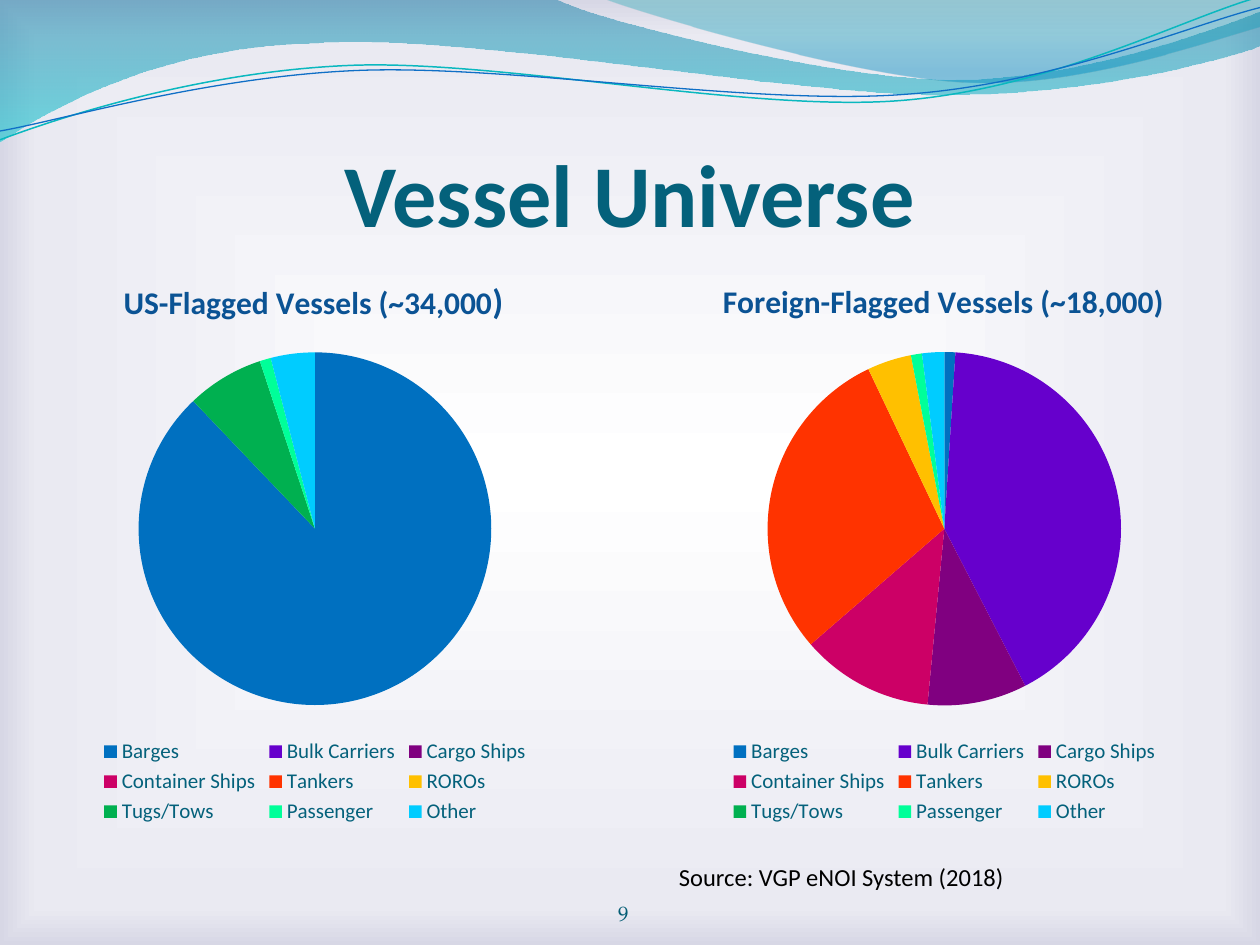
from dataclasses import dataclass

from lxml.etree import SubElement, fromstring
from pptx import Presentation
from pptx.chart.data import CategoryChartData
from pptx.dml.color import RGBColor as RGB
from pptx.enum.chart import XL_CHART_TYPE as ChartType, XL_LEGEND_POSITION as LegendPos
from pptx.enum.text import MSO_ANCHOR as Anchor, MSO_AUTO_SIZE as AutoSize, PP_ALIGN as Align
from pptx.oxml.ns import nsdecls, qn
from pptx.util import Inches, Pt

COLORS = {
    "title": "04617B", "chart_title": "0B5394", "legend": "04617B",
    "source": "000000", "number": "045D75",
    "teal_line": "0AB8BF", "blue_line": "0F6FC6",
}
SLICES = {
    "Barges": "0070C0", "Bulk Carriers": "6600CC", "Cargo Ships": "800080",
    "Container Ships": "CC0066", "Tankers": "FF3300", "ROROs": "FFC000",
    "Tugs/Tows": "00B050", "Passenger": "00FF99", "Other": "00CCFF",
}
DOWNWARD = '<a:lin ang="5400000" scaled="0"/>'
FROM_CENTER = '<a:path path="rect"><a:fillToRect l="50000" t="50000" r="50000" b="50000"/></a:path>'


@dataclass
class Wave:
    start: tuple
    segments: list
    stops: tuple = ()
    line: str = ""
    width: float = 0


@dataclass
class Pie:
    left: float
    width: float
    title: list
    title_x: float
    values: tuple


WAVES = [
    Wave((0, 0), [
        (4.4, -0.01), (4.76, 0.17, 6.64, 0.63, 7.58, 0.63), (8.53, 0.63, 9.58, 0.26, 10, 0.09),
        (10.01, 0.36), (9.83, 0.44, 8.7, 0.76, 7.46, 0.75), (6.22, 0.75, 3.82, 0.28, 2.57, 0.34),
        (1.29, 0.36, 0.46, 0.83, -0.01, 1.13), (0, 0),
    ], stops=((0, "0074A1", 45), (100, "00C6CF", 55))),
    Wave((4.79, -0.01), [
        (5.09, 0.11, 6.82, 0.62, 7.69, 0.65), (8.56, 0.69, 9.61, 0.32, 10, 0.21), (10, 0),
        (4.79, -0.01),
    ], stops=((0, "00A1A9", 30), (80, "008BBF", 45))),
    Wave((0, 1.11), [
        (0.48, 0.93, 1.58, 0.57, 2.77, 0.52), (3.95, 0.47, 5.93, 0.89, 7.13, 0.8),
        (8.33, 0.71, 9.38, 0.15, 9.98, -0.02),
    ], line="teal_line", width=0.85),
    Wave((0, 1.04), [
        (0.47, 0.96, 1.64, 0.61, 2.83, 0.56), (4.03, 0.51, 5.97, 0.84, 7.17, 0.75),
        (8.36, 0.67, 9.41, 0.21, 10, 0.06),
    ], line="blue_line", width=0.75),
]
PIES = [
    Pie(0, 5, [("US-Flagged Vessels (~34,000", 18), (")", 20)], 0.19,
        (87, 0, 0, 0, 0, 0, 7, 1, 4)),
    Pie(4.99, 5.01, [("Foreign-Flagged Vessels (~18,000)", 18)], 0.14,
        (1, 41, 9, 12, 29, 4, 0, 1, 2)),
]


def add_text(p, text: str, size: float, color: str, font: str = "Calibri", bold: bool = False) -> None:
    r = p.add_run()
    r.text = text
    r.font.size, r.font.name, r.font.bold = Pt(size), font, bold
    r.font.color.rgb = RGB.from_string(COLORS[color])


def set_gradient(fill, element, stops: tuple, direction: str) -> None:
    fill.gradient()
    old = next(element.iter(qn("a:gradFill")))
    marks = "".join(
        f'<a:gs pos="{pos * 1000}"><a:srgbClr val="{color}"><a:alpha val="{alpha * 1000}"/></a:srgbClr></a:gs>'
        for pos, color, alpha in stops)
    new = fromstring(f'<a:gradFill {nsdecls("a")} rotWithShape="1"><a:gsLst>{marks}</a:gsLst>{direction}</a:gradFill>')
    old.getparent().replace(old, new)


def bend(sp, segments: list) -> None:
    outline = next(sp.element.iter(qn("a:path")))
    lines = iter(outline.findall(qn("a:lnTo")))
    for seg in segments:
        line = next(lines)
        if len(seg) == 2:
            continue
        curve = SubElement(outline, qn("a:cubicBezTo"))
        outline.replace(line, curve)
        curve.append(line[0])
        for _ in range(2):
            line = next(lines)
            curve.append(line[0])
            outline.remove(line)


def add_wave(s, wave: Wave) -> None:
    builder = s.shapes.build_freeform(Inches(wave.start[0]), Inches(wave.start[1]))
    builder.add_line_segments(
        [(Inches(seg[i]), Inches(seg[i + 1])) for seg in wave.segments for i in range(0, len(seg), 2)],
        close=bool(wave.stops))
    sp = builder.convert_to_shape()
    bend(sp, wave.segments)
    sp.shadow.inherit = False
    if wave.stops:
        set_gradient(sp.fill, sp.element, wave.stops, DOWNWARD)
        sp.line.fill.background()
    else:
        sp.fill.background()
        sp.line.color.rgb = RGB.from_string(COLORS[wave.line])
        sp.line.width = Pt(wave.width)


def set_layout(element, target: str = "", **fractions: float) -> None:
    for old in element.findall(qn("c:layout")):
        element.remove(old)
    inner = f'<c:layoutTarget val="{target}"/>' if target else ""
    modes = '<c:xMode val="edge"/><c:yMode val="edge"/>'
    sizes = "".join(f'<c:{key} val="{value}"/>' for key, value in fractions.items())
    layout = fromstring(
        f'<c:layout {nsdecls("c")}><c:manualLayout>{inner}{modes}{sizes}</c:manualLayout></c:layout>')
    tx = element.find(qn("c:tx"))
    element.insert(0 if tx is None else 1, layout)


def add_pie(s, pie: Pie) -> None:
    data = CategoryChartData()
    data.categories = list(SLICES)
    data.add_series("Series 1", pie.values)
    chart = s.shapes.add_chart(
        ChartType.PIE, Inches(pie.left), Inches(2.04), Inches(pie.width), Inches(4.54), data).chart
    chart.font.size, chart.font.name = Pt(10), "Calibri"
    chart.has_title = True
    p = chart.chart_title.text_frame.paragraphs[0]
    for text, size in pie.title:
        add_text(p, text, size, "chart_title", bold=True)
    chart.chart_title.include_in_layout = False
    chart.has_legend = True
    legend = chart.legend
    legend.position, legend.include_in_layout = LegendPos.BOTTOM, False
    legend.font.size, legend.font.name = Pt(12), "Calibri"
    legend.font.color.rgb = RGB.from_string(COLORS["legend"])
    plot = chart.plots[0]
    plot.vary_by_categories = True
    for i, color in enumerate(SLICES.values()):
        point = plot.series[0].points[i].format
        point.fill.solid()
        point.fill.fore_color.rgb = RGB.from_string(color)
        point.line.fill.background()
    root = chart.element
    set_layout(next(root.iter(qn("c:title"))), x=pie.title_x, y=0.03)
    set_layout(next(root.iter(qn("c:plotArea"))), "inner", x=0.22, y=0.16, w=0.56, h=0.63)


def add_box(s, left: float, top: float, width: float, height: float):
    tf = s.shapes.add_textbox(Inches(left), Inches(top), Inches(width), Inches(height)).text_frame
    tf.word_wrap = True
    return tf


def main() -> None:
    prs = Presentation()
    prs.slide_width, prs.slide_height = Inches(10), Inches(7.5)
    s = prs.slides.add_slide(prs.slide_layouts[5])
    set_gradient(s.background.fill, s.element,
                 ((0, "FFFFFF", 100), (92, "EAEAF2", 100), (100, "D7D7E5", 100)), FROM_CENTER)
    for wave in WAVES:
        add_wave(s, wave)

    title = s.shapes.title
    title.left, title.top, title.width, title.height = Inches(0), Inches(1.06), Inches(10), Inches(1.25)
    tf = title.text_frame
    tf.vertical_anchor, tf.auto_size = Anchor.BOTTOM, AutoSize.NONE
    tf.margin_left = tf.margin_right = 0
    tf.margin_top, tf.margin_bottom = Inches(0.05), Inches(0.36)
    tf.paragraphs[0].alignment = Align.CENTER
    add_text(tf.paragraphs[0], "Vessel Universe", 50.4, "title", bold=True)

    tf = add_box(s, 5.29, 6.79, 3.05, 0.34)
    tf.auto_size = AutoSize.SHAPE_TO_FIT_TEXT
    add_text(tf.paragraphs[0], "Source: VGP eNOI System (2018)", 14, "source")

    for pie in PIES:
        add_pie(s, pie)

    tf = add_box(s, 4.16, 6.95, 0.83, 0.4)
    tf.margin_left = tf.margin_right = tf.margin_top = tf.margin_bottom = 0
    tf.vertical_anchor = Anchor.BOTTOM
    tf.paragraphs[0].alignment = Align.RIGHT
    add_text(tf.paragraphs[0], "9", 12, "number", "TeX Gyre Pagella")
    prs.save("out.pptx")


if __name__ == "__main__":
    main()
